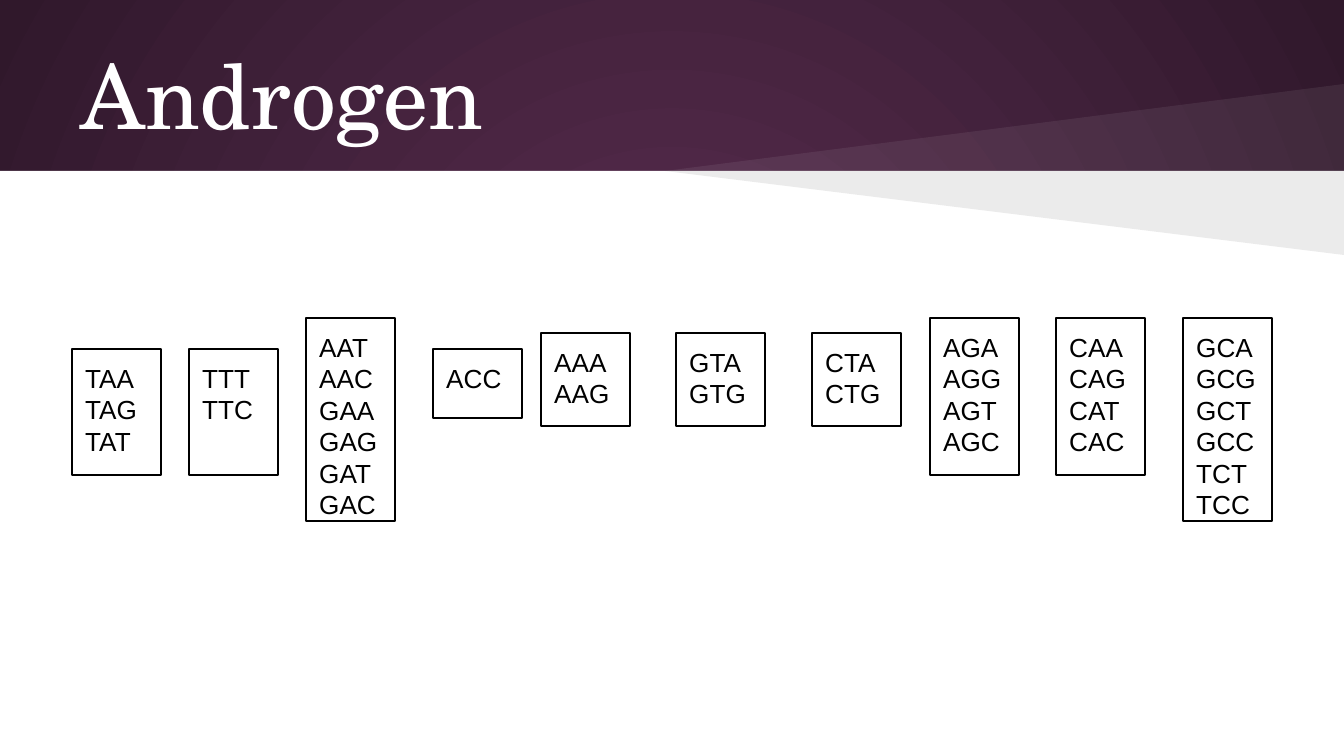
from lxml import etree
from pptx import Presentation
from pptx.dml.color import RGBColor
from pptx.enum.shapes import MSO_SHAPE
from pptx.enum.text import MSO_ANCHOR, PP_ALIGN
from pptx.oxml import parse_xml
from pptx.oxml.ns import qn
from pptx.util import Inches, Pt

RECTANGLE = MSO_SHAPE.RECTANGLE
TOP, MIDDLE = MSO_ANCHOR.TOP, MSO_ANCHOR.MIDDLE
LEFT = PP_ALIGN.LEFT

WHITE = RGBColor(0xFF, 0xFF, 0xFF)
BLACK = RGBColor(0x00, 0x00, 0x00)
PLUM = RGBColor(0x59, 0x2D, 0x50)
DARK_PLUM = RGBColor(0x30, 0x18, 0x2B)

TITLE = "Androgen"
# Codons in each box, with left, top and height in px
CODON_BOXES = [
    ("TAA TAG TAT", 72, 349, 126),
    ("TTT TTC", 189, 349, 126),
    ("AAT AAC GAA GAG GAT GAC", 306, 318, 203),
    ("ACC", 433, 349, 69),
    ("AAA AAG", 541, 333, 93),
    ("GTA GTG", 676, 333, 93),
    ("CTA CTG", 812, 333, 93),
    ("AGA AGG AGT AGC", 930, 318, 157),
    ("CAA CAG CAT CAC", 1056, 318, 157),
    ("GCA GCG GCT GCC TCT TCC", 1183, 318, 203),
]
BOX_WIDTH = 89
SLIDE_WIDTH, SLIDE_HEIGHT = 1344, 756
BAND_HEIGHT = 171
WEDGE_TIP = 665
# Far edge of each wedge in px, colour and opacity in percent
WEDGES = [(84, WHITE, 7), (255, BLACK, 8)]


def px(length):
    return round(length * 914400 / 134.4)


def paint(shape, color):
    shape.shadow.inherit = False
    shape.line.fill.background()
    shape.fill.solid()
    shape.fill.fore_color.rgb = color


def set_frame(frame, anchor):
    frame.word_wrap = True
    frame.vertical_anchor = anchor
    frame.margin_left = frame.margin_right = Inches(0.1)
    frame.margin_top = frame.margin_bottom = Inches(0.1)


def set_text(paragraph, font_name, size, color):
    paragraph.alignment = LEFT
    paragraph.font.name = font_name
    paragraph.font.size = Pt(size)
    paragraph.font.color.rgb = color


prs = Presentation()
prs.slide_width, prs.slide_height = px(SLIDE_WIDTH), px(SLIDE_HEIGHT)
slide = prs.slides.add_slide(prs.slide_layouts[5])
shapes = slide.shapes

# Background glow, spreading from the slide centre
background = slide.background.fill
background.gradient()
for stop, color, position in zip(background.gradient_stops, (PLUM, DARK_PLUM), (0, 1)):
    stop.color.rgb = color
    stop.position = position
linear = next(slide.element.iter(qn("a:lin")))
linear.getparent().replace(linear, parse_xml(
    '<a:path xmlns:a="http://schemas.openxmlformats.org/drawingml/2006/main" path="circle">'
    '<a:fillToRect l="50000" t="50000" r="50000" b="50000"/></a:path>'))

# White body below the title band
body = shapes.add_shape(RECTANGLE, 0, px(BAND_HEIGHT), px(SLIDE_WIDTH),
                        px(SLIDE_HEIGHT - BAND_HEIGHT))
paint(body, WHITE)

# Translucent wedges above and below the band's edge
for far_edge, color, opacity in WEDGES:
    builder = shapes.build_freeform(px(SLIDE_WIDTH), px(BAND_HEIGHT))
    builder.add_line_segments([(px(WEDGE_TIP), px(BAND_HEIGHT)),
                               (px(SLIDE_WIDTH), px(far_edge))])
    wedge = builder.convert_to_shape()
    paint(wedge, color)
    fill_color = next(wedge.element.spPr.iter(qn("a:srgbClr")))
    etree.SubElement(fill_color, qn("a:alpha"), val=str(opacity * 1000))

# Title, in front of the wedges
title = shapes.title
shapes.element.append(title.element)
title.left, title.top, title.width, title.height = px(67), px(31), px(1210), px(126)
title.text_frame.text = TITLE
set_frame(title.text_frame, MIDDLE)
set_text(title.text_frame.paragraphs[0], "TeX Gyre Schola", 48, WHITE)

# Codon boxes
for codons, left, top, height in CODON_BOXES:
    box = shapes.add_shape(RECTANGLE, px(left), px(top), px(BOX_WIDTH), px(height))
    box.shadow.inherit = False
    box.fill.background()
    box.line.color.rgb = BLACK
    box.line.width = Pt(0.75)
    set_frame(box.text_frame, TOP)
    paragraph = box.text_frame.paragraphs[0]
    paragraph.text = codons.replace(" ", "\v")
    set_text(paragraph, "Arial", 14, BLACK)

prs.save("out.pptx")
